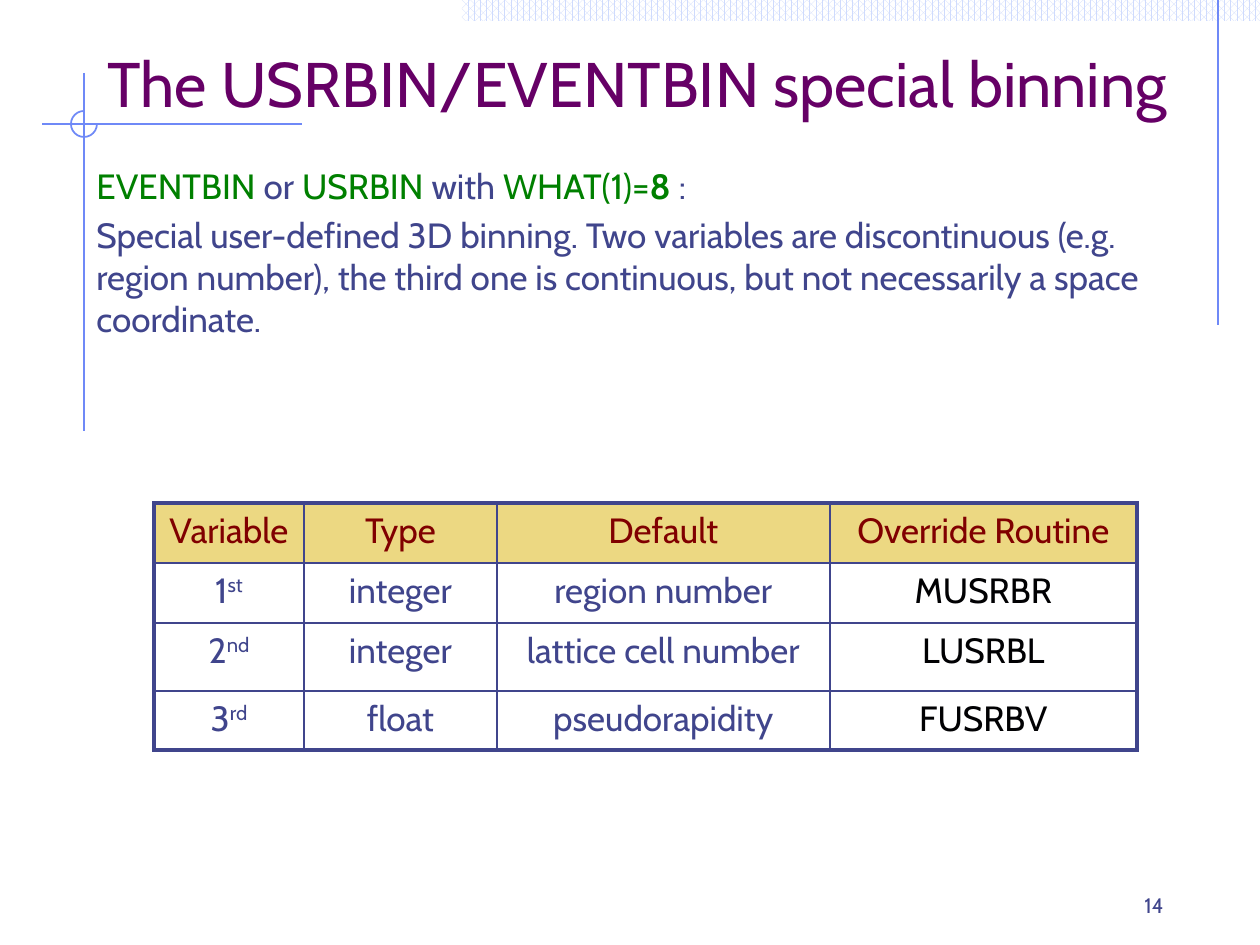
import pptx
import pptx.dml.color
import pptx.enum.dml
import pptx.enum.shapes
import pptx.enum.text
import pptx.oxml.ns
import pptx.util
import lxml.etree

PX = 914400 / 126
FONT = "Cabin"
INK = "40458C"
GREEN = "008000"
PURPLE = "660066"
MAROON = "800000"
BLACK = "010103"
RULE = "6F89F7"
GOLD = "ECD882"
WHITE = "FFFFFF"
ALIGN = pptx.enum.text.PP_ALIGN
ANCHOR = pptx.enum.text.MSO_ANCHOR
SHAPE = pptx.enum.shapes.MSO_SHAPE


def emu(*lengths):
    return [pptx.util.Emu(round(length * PX)) for length in lengths]


def color(value):
    return pptx.dml.color.RGBColor.from_string(value)


def add_element(parent, tag, **attributes):
    element = lxml.etree.SubElement(parent, pptx.oxml.ns.qn(tag))
    for name, value in attributes.items():
        element.set(name, str(value))
    return element


def add_run(paragraph, text, size, ink, bold=False, baseline=0):
    run = paragraph.add_run()
    run.text = text
    run.font.name = FONT
    run.font.size = pptx.util.Pt(size)
    run.font.bold = bold
    run.font.color.rgb = color(ink)
    if baseline:
        run._r.get_or_add_rPr().set("baseline", str(baseline * 1000))


def add_text(slide, box, paragraphs, size, align=ALIGN.LEFT, anchor=ANCHOR.TOP):
    frame = slide.shapes.add_textbox(*emu(*box)).text_frame
    frame.word_wrap = True
    frame.vertical_anchor = anchor
    for index, runs in enumerate(paragraphs):
        paragraph = frame.add_paragraph() if index else frame.paragraphs[0]
        paragraph.alignment = align
        if index:
            paragraph.space_before = pptx.util.Pt(size * 0.2)
        for text, ink, *style in runs:
            add_run(paragraph, text, size, ink, *style)


def add_line(slide, start_x, start_y, end_x, end_y):
    straight = pptx.enum.shapes.MSO_CONNECTOR.STRAIGHT
    line = slide.shapes.add_connector(straight, *emu(start_x, start_y, end_x, end_y))
    line.line.color.rgb = color(RULE)
    line.line.width = pptx.util.Pt(1)
    add_element(line._element.spPr, "a:effectLst")


def add_top_band(slide, box):
    band = slide.shapes.add_shape(SHAPE.RECTANGLE, *emu(*box))
    band.shadow.inherit = False
    band.fill.patterned()
    band.fill.pattern = pptx.enum.dml.MSO_PATTERN.PERCENT_70
    band.fill.fore_color.rgb = color("CFDBFD")
    band.fill.back_color.rgb = color(WHITE)
    band.line.fill.background()


def add_crosshair(slide, box):
    left, top, width, height = box
    center_x, center_y, radius = left + 42, top + 51, 13
    add_line(slide, left + width, center_y, left, center_y)
    add_line(slide, center_x, top, center_x, top + height)
    arc_box = emu(center_x - radius, center_y - radius, 2 * radius, 2 * radius)
    arc = slide.shapes.add_shape(SHAPE.ARC, *arc_box)
    arc.shadow.inherit = False
    arc.adjustments[0] = 0
    arc.adjustments[1] = 270 * 0.6
    arc.fill.background()
    arc.line.color.rgb = color(RULE)
    arc.line.width = pptx.util.Pt(1)


def add_borders(cell, outer_sides):
    properties = cell._tc.get_or_add_tcPr()
    for side in "LRTB":
        points = 2.25 if side in outer_sides else 1
        border = add_element(properties, f"a:ln{side}", w=pptx.util.Pt(points))
        add_element(add_element(border, "a:solidFill"), "a:srgbClr", val=INK)


def add_variable_table(slide, box, widths, heights, rows):
    row_count, column_count = len(heights), len(widths)
    table = slide.shapes.add_table(row_count, column_count, *emu(*box)).table
    table.first_row = False
    table.horz_banding = False
    for column, width in zip(table.columns, emu(*widths)):
        column.width = width
    for row, height in zip(table.rows, emu(*heights)):
        row.height = height
    for row_index, texts in enumerate(rows):
        for column_index, text in enumerate(texts):
            cell = table.cell(row_index, column_index)
            edges = {"L": column_index == 0, "R": column_index == column_count - 1,
                     "T": row_index == 0, "B": row_index == row_count - 1}
            add_borders(cell, [side for side, outer in edges.items() if outer])
            cell.fill.solid()
            cell.fill.fore_color.rgb = color(WHITE if row_index else GOLD)
            paragraph = cell.text_frame.paragraphs[0]
            paragraph.alignment = ALIGN.CENTER
            ink = MAROON if row_index == 0 else BLACK if edges["R"] else INK
            if row_index and column_index == 0:
                add_run(paragraph, text[0], 20, ink)
                add_run(paragraph, text[1:], 20, ink, baseline=30)
            else:
                add_run(paragraph, text, 20, ink)


def main():
    presentation = pptx.Presentation()
    presentation.slide_width, presentation.slide_height = emu(1260, 945)
    slide = presentation.slides.add_slide(presentation.slide_layouts[6])
    add_top_band(slide, (462, 0, 798, 21))
    add_line(slide, 1218, 0, 1218, 325)
    add_crosshair(slide, (42, 73, 260, 358))
    add_text(slide, (955, 882, 221, 42), [[("14", INK)]], 12, ALIGN.RIGHT, ANCHOR.BOTTOM)
    title = "The USRBIN/EVENTBIN special binning"
    add_text(slide, (95, 42, 1165, 84), [[(title, PURPLE)]], 36, anchor=ANCHOR.BOTTOM)
    add_text(slide, (84, 158, 1091, 374), [
        [("EVENTBIN", GREEN), (" or ", INK), ("USRBIN", GREEN), (" with ", INK),
         ("WHAT(1)=", GREEN), ("8", GREEN, True), (" :", INK)],
        [("Special user-defined 3D binning. Two variables are discontinuous "
          "(e.g. region number), the third one is continuous, but not "
          "necessarily a space coordinate.", INK)],
    ], 20)
    add_variable_table(slide, (154, 503, 983, 247), (150, 193, 333, 307), (60, 60, 68, 59), [
        ("Variable", "Type", "Default", "Override Routine"),
        ("1st", "integer", "region number", "MUSRBR"),
        ("2nd", "integer", "lattice cell number", "LUSRBL"),
        ("3rd", "float", "pseudorapidity", "FUSRBV"),
    ])
    presentation.save("out.pptx")


if __name__ == "__main__":
    main()
